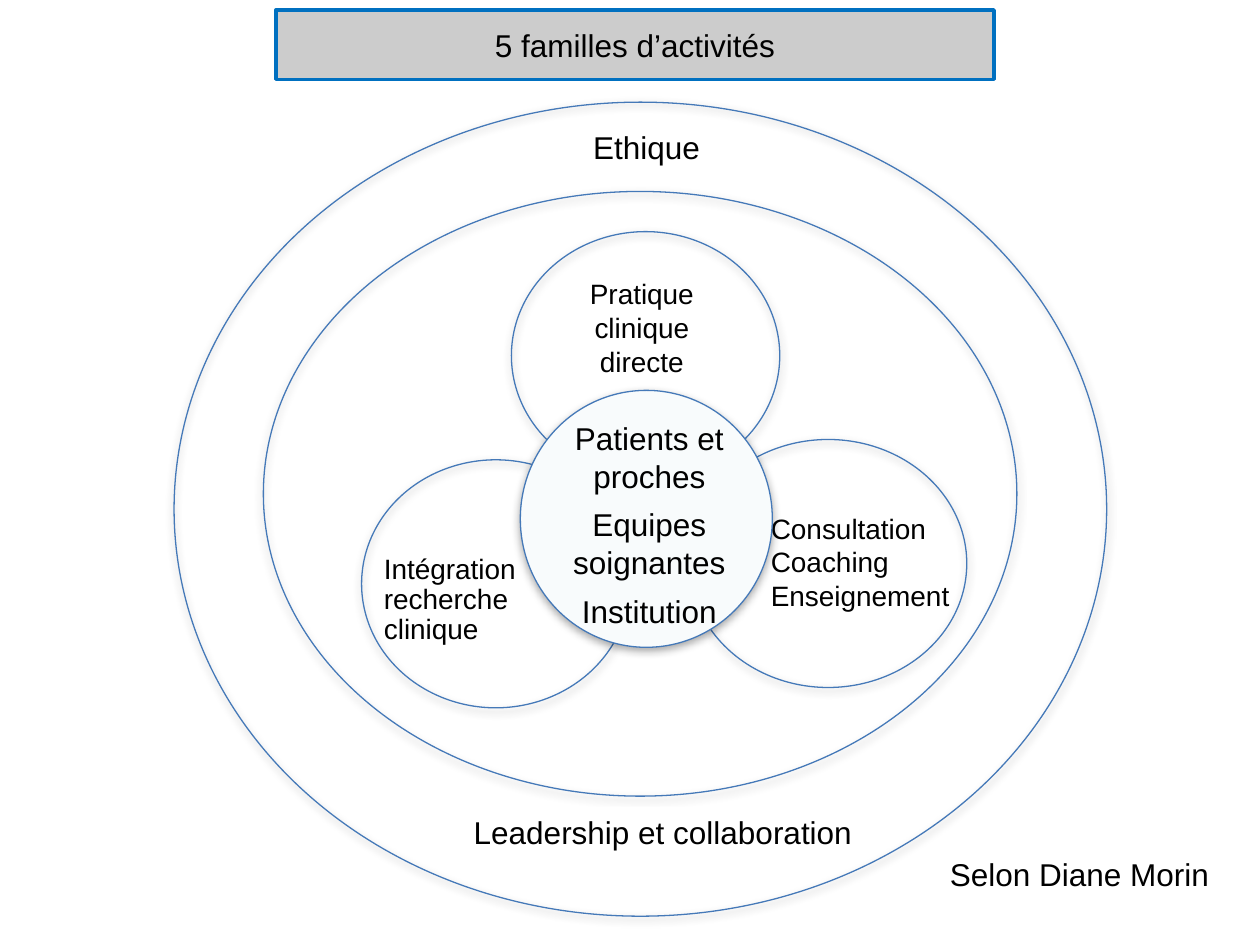
import pptx
import pptx.util
import pptx.dml.color
import pptx.enum.shapes
import pptx.enum.text
import pptx.oxml
import pptx.oxml.ns
from pptx.util import Cm

ALIGN = pptx.enum.text.PP_ALIGN
OUTLINE = "4579B8"
SHADOW = (
    '<a:outerShdw xmlns:a="http://schemas.openxmlformats.org/drawingml/2006/main" '
    'blurRad="63500" dist="23000" dir="5400000" rotWithShape="0">'
    '<a:srgbClr val="000000"><a:alpha val="35000"/></a:srgbClr></a:outerShdw>'
)


def color(hex_code):
    """Turn a hex string into a colour."""
    return pptx.dml.color.RGBColor.from_string(hex_code)


def paint(shape, fill=None, line=None, width=0.75):
    """Set the fill and outline of a shape."""
    if fill:
        shape.fill.solid()
        shape.fill.fore_color.rgb = color(fill)
    else:
        shape.fill.background()
    if line:
        shape.line.color.rgb = color(line)
        shape.line.width = pptx.util.Pt(width)


def write(tf, lines, size=18, align=ALIGN.LEFT, spacing=None, after=0):
    """Write one paragraph per line and format the runs."""
    tf.text = "\n".join(lines)
    for p in tf.paragraphs:
        p.alignment = align
        p.line_spacing = spacing
        p.space_after = pptx.util.Pt(after)
        for r in p.runs:
            r.font.name = "Arial"
            r.font.size = pptx.util.Pt(size)
            r.font.color.rgb = color("000000")


def add_title(s, text, left, top, width, height):
    """Place the title placeholder as a framed banner."""
    title = s.shapes.title
    title.left, title.top = Cm(left), Cm(top)
    title.width, title.height = Cm(width), Cm(height)
    paint(title, "CCCCCC", "0070C0", 2)
    tf = title.text_frame
    tf.auto_size = pptx.enum.text.MSO_AUTO_SIZE.NONE
    tf.vertical_anchor = pptx.enum.text.MSO_ANCHOR.MIDDLE
    write(tf, [text], align=ALIGN.CENTER)


def add_ellipse(s, left, top, width, height, fill=None):
    """Draw an outlined ellipse with a soft shadow."""
    sp = s.shapes.add_shape(
        pptx.enum.shapes.MSO_SHAPE.OVAL, Cm(left), Cm(top), Cm(width), Cm(height)
    )
    paint(sp, fill, OUTLINE)
    sp.shadow.inherit = False
    effects = sp._element.spPr.find(pptx.oxml.ns.qn("a:effectLst"))
    effects.append(pptx.oxml.parse_xml(SHADOW))


def add_label(s, lines, left, top, width, height, fill=None, inset=None, wrap=True, **style):
    """Add a text box holding the given lines."""
    sp = s.shapes.add_textbox(Cm(left), Cm(top), Cm(width), Cm(height))
    paint(sp, fill)
    tf = sp.text_frame
    tf.word_wrap = wrap
    if inset:
        tf.margin_left = tf.margin_right = tf.margin_top = tf.margin_bottom = Cm(inset)
    write(tf, lines, **style)
    return sp


def main():
    """Build the slide of the five activity families."""
    prs = pptx.Presentation()
    prs.slide_width, prs.slide_height = Cm(25.4), Cm(19.05)
    s = prs.slides.add_slide(prs.slide_layouts[5])

    add_title(s, "5 familles d’activités", 5.56, 0.2, 14.48, 1.4)

    add_ellipse(s, 5.31, 3.86, 15.19, 12.19)
    add_ellipse(s, 13.9, 8.86, 5.59, 5)
    add_label(s, ["Ethique"], 11.71, 2.46, 3.61, 1, fill="FFFFFF")
    add_label(s, ["Intégration recherche clinique"], 7.49, 11.07, 3.61, 2.21,
              fill="FFFFFF", size=16, spacing=0.9)
    add_label(s, ["Consultation", "Coaching", "Enseignement"], 15.29, 10.06, 4.6, 2.49,
              inset=0.25, size=16)
    add_label(s, ["Pratique clinique directe"], 11.3, 5.46, 3.28, 2.21,
              fill="FFFFFF", size=16, align=ALIGN.CENTER)
    add_label(s, ["Leadership et collaboration"], 9.3, 16.26, 8.41, 1, fill="FFFFFF")

    add_ellipse(s, 3.51, 2.06, 18.8, 16.41)
    add_ellipse(s, 7.29, 9.27, 5.41, 5)
    add_ellipse(s, 10.31, 4.67, 5.41, 5)
    add_ellipse(s, 10.49, 7.87, 5.08, 5.18, "F8FBFC")
    add_label(s, ["Patients et proches", "Equipes soignantes", "Institution"],
              11.3, 8.33, 3.58, 3.38, align=ALIGN.CENTER, after=6)

    credit = add_label(s, ["Selon Diane Morin"], 18.9, 17.12, 5.79, 1.02, wrap=False)
    credit.text_frame.auto_size = pptx.enum.text.MSO_AUTO_SIZE.SHAPE_TO_FIT_TEXT

    prs.save("out.pptx")


if __name__ == "__main__":
    main()
